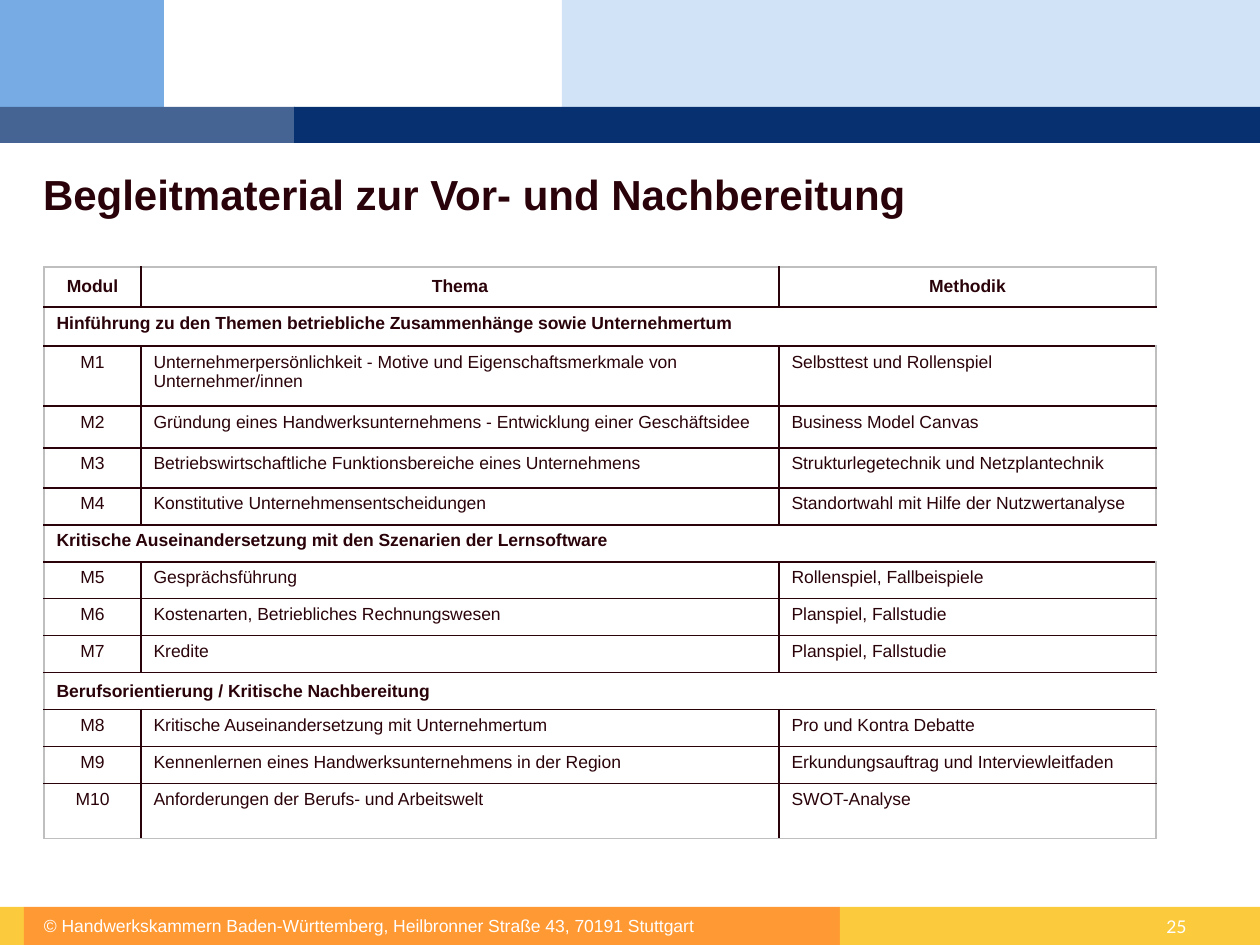
from pptx import Presentation
from pptx.dml.color import RGBColor
from pptx.enum.shapes import MSO_SHAPE
from pptx.enum.text import MSO_ANCHOR, PP_ALIGN
from pptx.oxml import parse_xml
from pptx.oxml.ns import nsdecls
from pptx.util import Emu, Pt

INK, GREY, WHITE = "2A030A", "BFBFBF", "FFFFFF"
YELLOW, ORANGE = "FBCB3D", "FF9933"

BANDS = [
    ((562, 0, 698, 107), "D1E3F6"),
    ((0, 907, 24, 38), YELLOW),
    ((0, 0, 164, 107), "76ABE4"),
    ((24, 907, 816, 38), ORANGE),
    ((0, 107, 295, 36), "456494"),
    ((294, 107, 966, 36), "073070"),
    ((840, 907, 420, 38), YELLOW),
]
COLUMNS = [97, 638, 377]
ROWS = [
    (40, "Modul", "Thema", "Methodik"),
    (39, "Hinführung zu den Themen betriebliche Zusammenhänge sowie Unternehmertum"),
    (60, "M1", "Unternehmerpersönlichkeit - Motive und Eigenschaftsmerkmale von Unternehmer/innen",
     "Selbsttest und Rollenspiel"),
    (42, "M2", "Gründung eines Handwerksunternehmens - Entwicklung einer Geschäftsidee",
     "Business Model Canvas"),
    (40, "M3", "Betriebswirtschaftliche Funktionsbereiche eines Unternehmens",
     "Strukturlegetechnik und Netzplantechnik"),
    (37, "M4", "Konstitutive Unternehmensentscheidungen",
     "Standortwahl mit Hilfe der Nutzwertanalyse"),
    (37, "Kritische Auseinandersetzung mit den Szenarien der Lernsoftware"),
    (37, "M5", "Gesprächsführung", "Rollenspiel, Fallbeispiele"),
    (37, "M6", "Kostenarten, Betriebliches Rechnungswesen", "Planspiel, Fallstudie"),
    (37, "M7", "Kredite", "Planspiel, Fallstudie"),
    (37, "Berufsorientierung / Kritische Nachbereitung"),
    (37, "M8", "Kritische Auseinandersetzung mit Unternehmertum", "Pro und Kontra Debatte"),
    (37, "M9", "Kennenlernen eines Handwerksunternehmens in der Region",
     "Erkundungsauftrag und Interviewleitfaden"),
    (55, "M10", "Anforderungen der Berufs- und Arbeitswelt", "SWOT-Analyse"),
]
MIDDLE_ROWS = (0, 10)


def px(n):
    """Turn pixels into EMU."""
    return Emu(round(n * 914400 / 126))


def rgb(value):
    """Turn a hex string into a colour."""
    return RGBColor.from_string(value)


class Deck:
    """Hold the text style and the current slide."""

    def __init__(self, slide, font="Arial", size=10, color=INK):
        """Keep the slide and the default style."""
        self.s, self.font, self.size, self.color = slide, font, size, color

    def run(self, p, text, align=None, **style):
        """Fill a paragraph with one styled run."""
        p.alignment = align
        r = p.add_run()
        r.text = text
        r.font.color.rgb = rgb(style.pop("color", self.color))
        values = {"name": self.font, "size": Pt(self.size), "bold": False} | style
        for name, value in values.items():
            setattr(r.font, name, value)

    def rect(self, box, color):
        """Add a plain filled rectangle."""
        sp = self.s.shapes.add_shape(MSO_SHAPE.RECTANGLE, *map(px, box))
        sp.shadow.inherit = False
        sp.fill.solid()
        sp.fill.fore_color.rgb = rgb(color)
        sp.line.fill.background()

    def text(self, box, text, frame=None, **style):
        """Add a text box with one paragraph."""
        tf = self.s.shapes.add_textbox(*map(px, box)).text_frame
        for name, value in ({"word_wrap": True} | (frame or {})).items():
            setattr(tf, name, value)
        self.run(tf.paragraphs[0], text, **style)

    def borders(self, cell, colors):
        """Draw the given sides of a cell, leaving out those without colour."""
        tc_pr = cell._tc.get_or_add_tcPr()
        for side, color in colors.items():
            fill = f'<a:solidFill><a:srgbClr val="{color}"/></a:solidFill>' if color else "<a:noFill/>"
            tc_pr.append(parse_xml(f'<a:ln{side} {nsdecls("a")} w="12700">{fill}</a:ln{side}>'))

    def table(self, left, top, columns, rows):
        """Add the module table with section rows merged across."""
        heights = [row[0] for row in rows]
        last_row, last_col = len(rows) - 1, len(columns) - 1
        box = left, top, sum(columns), sum(heights)
        table = self.s.shapes.add_table(len(rows), len(columns), *map(px, box)).table
        for col, width in zip(table.columns, columns):
            col.width = px(width)
        for i, (height, *texts) in enumerate(rows):
            table.rows[i].height = px(height)
            section = len(texts) == 1
            inner = None if section else INK
            for j in range(len(columns)):
                cell = table.cell(i, j)
                self.borders(cell, {
                    "L": inner if j else GREY,
                    "R": inner if j < last_col else GREY,
                    "T": INK if i else GREY,
                    "B": INK if i < last_row else GREY,
                })
                cell.fill.background()
                cell.vertical_anchor = MSO_ANCHOR.MIDDLE if i in MIDDLE_ROWS else MSO_ANCHOR.TOP
            if section:
                table.cell(i, 0).merge(table.cell(i, last_col))
            for j, text in enumerate(texts):
                centred = i == 0 or (j == 0 and not section)
                self.run(table.cell(i, j).text_frame.paragraphs[0], text,
                         PP_ALIGN.CENTER if centred else PP_ALIGN.LEFT,
                         bold=i == 0 or section)


def main():
    """Build the slide and save it."""
    prs = Presentation()
    prs.slide_width, prs.slide_height = px(1260), px(945)
    deck = Deck(prs.slides.add_slide(prs.slide_layouts[6]))
    flush = dict.fromkeys(("margin_left", "margin_top", "margin_right", "margin_bottom"), 0)
    for box, color in BANDS:
        deck.rect(box, color)
    deck.text((44, 907, 795, 38), "© Handwerkskammern Baden-Württemberg, Heilbronner Straße 43, 70191 Stuttgart",
              flush | {"vertical_anchor": MSO_ANCHOR.MIDDLE}, color=WHITE)
    deck.text((43, 168, 1114, 94), "Begleitmaterial zur Vor- und Nachbereitung",
              flush, size=Pt(24), bold=True)
    deck.text((1154, 910, 88, 23), "25", name="Lato", color=WHITE)
    deck.table(44, 267, COLUMNS, ROWS)
    prs.save("out.pptx")


if __name__ == "__main__":
    main()
